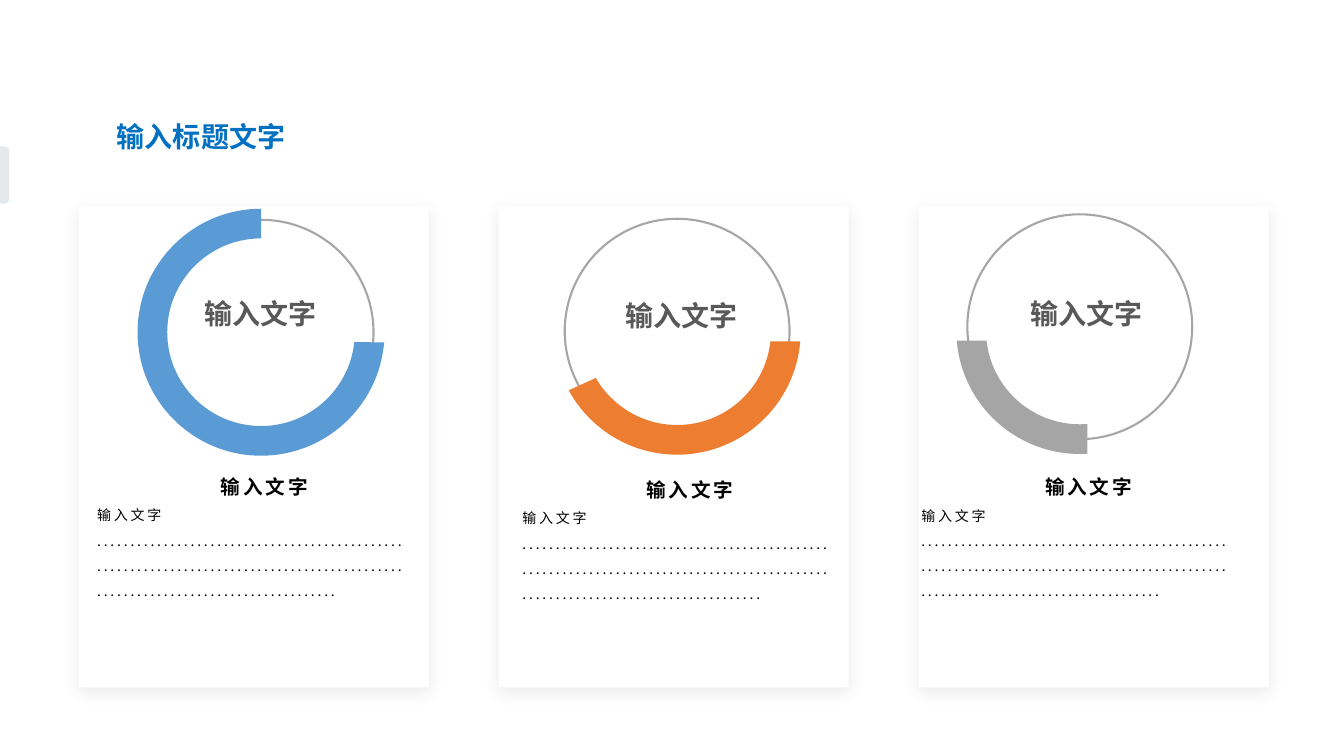
"""Build a slide with three ring cards under a title."""
from dataclasses import dataclass
from math import ceil, cos, floor, radians, sin, tan

from lxml.etree import SubElement
from pptx import Presentation
from pptx.dml.color import RGBColor
from pptx.enum.shapes import MSO_SHAPE
from pptx.enum.text import MSO_ANCHOR, MSO_AUTO_SIZE, PP_ALIGN
from pptx.oxml.ns import qn
from pptx.util import Pt


@dataclass(frozen=True)
class Theme:
    """Hold the colours, font and type sizes."""
    font: str = "Noto Sans CJK SC"
    title: str = "0070C0"
    label: str = "595959"
    ink: str = "000000"
    paper: str = "FFFFFF"
    tab: str = "E5E9EB"
    ring: str = "A6A6A6"
    blue: str = "5B9BD5"
    orange: str = "ED7D31"
    grey: str = "A5A5A5"
    large: int = 20
    head: int = 14
    small: int = 10


THEME = Theme()
RING, OUTER, INNER = 80.3, 88.2, 67
CARDS = [
    {"hub": (130.3, 90.3), "drop": 0, "fill": THEME.blue,
     "outer": (4.7, 270), "inner": (6.1, 270),
     "label": (82.8, 61.4, 96), "copy": (8.2, 180.9)},
    {"hub": (127.5, 89.6), "drop": 0, "fill": THEME.orange,
     "outer": (4.7, 151.4), "inner": (6.2, 150.1),
     "label": (83.2, 63, 100), "copy": (12, 183)},
    {"hub": (115.1, 86.4), "drop": 2.7, "fill": THEME.grey,
     "outer": (86.5, 175.3), "inner": (85.4, 173.8),
     "label": (72.9, 61.6, 142.6), "copy": (-3.1, 181.1)},
]


def style(item, **vals):
    """Set each format value on an item."""
    for name, val in vals.items():
        setattr(item, name, val)


def paint(shape, fill=None, line=None):
    """Give a shape its fill and line, and no shadow."""
    shape.shadow.inherit = False
    if fill:
        shape.fill.solid()
        shape.fill.fore_color.rgb = RGBColor.from_string(fill)
    else:
        shape.fill.background()
    if line:
        shape.line.color.rgb = RGBColor.from_string(line)
        shape.line.width = Pt(1.5)
    else:
        shape.line.fill.background()


def shade(shape):
    """Add a soft shadow below a shape."""
    effects = shape._element.spPr.find(qn("a:effectLst"))
    cast = SubElement(effects, qn("a:outerShdw"), blurRad=str(Pt(12)),
                      dist=str(Pt(3)), dir="5400000", algn="t", rotWithShape="0")
    tint = SubElement(cast, qn("a:srgbClr"), val=THEME.ink)
    SubElement(tint, qn("a:alpha"), val="8000")


def write(para, text, size, color, bold=False, space=0):
    """Write one run of text in a paragraph."""
    run = para.add_run()
    run.text = text
    style(run.font, size=Pt(size), bold=bold, name=THEME.font)
    run.font.color.rgb = RGBColor.from_string(color)
    props = run._r.get_or_add_rPr()
    SubElement(props, qn("a:ea"), typeface=THEME.font)
    if space:
        props.set("spc", str(space * 100))


def place(slide, kind, *box):
    """Add a preset shape in a box given in points."""
    return slide.shapes.add_shape(kind, *map(Pt, box))


def frame(slide, *box):
    """Add a text box that wraps and return its frame."""
    text = slide.shapes.add_textbox(*map(Pt, box)).text_frame
    text.word_wrap = True
    return text


def title(slide, x, y, w, h):
    """Set the slide title in its box."""
    shape = slide.shapes.title
    style(shape, left=Pt(x), top=Pt(y), width=Pt(w), height=Pt(h))
    style(shape.text_frame, word_wrap=True, auto_size=MSO_AUTO_SIZE.NONE,
          vertical_anchor=MSO_ANCHOR.TOP)
    para = shape.text_frame.paragraphs[0]
    para.alignment = PP_ALIGN.LEFT
    write(para, "输入标题文字", THEME.large, THEME.title, True)


def tab(slide, x, y, w, h):
    """Draw the edge tab, turned to fill its box."""
    shape = place(slide, MSO_SHAPE.ROUND_2_SAME_RECTANGLE,
                  x + (w - h) / 2, y + (h - w) / 2, h, w)
    shape.rotation = 90
    shape.adjustments[0] = 0.5
    paint(shape, THEME.tab)


def curve(x, y, radius, start, end):
    """List the Bezier points of an arc, cut at each quarter."""
    cuts = range(floor(start / 90) + 1, ceil(end / 90))
    turns = [radians(a) for a in (start, *(90 * n for n in cuts), end)]
    spots = [(cos(turns[0]), sin(turns[0]))]
    for a, b in zip(turns, turns[1:]):
        pull = 4 / 3 * tan((b - a) / 4)
        spots += [(cos(a) - pull * sin(a), sin(a) + pull * cos(a)),
                  (cos(b) + pull * sin(b), sin(b) - pull * cos(b)),
                  (cos(b), sin(b))]
    return [(100 * (x + radius * u), 100 * (y + radius * v)) for u, v in spots]


def bend(lines):
    """Turn each three line segments into one curve."""
    for first, *rest in zip(lines[::3], lines[1::3], lines[2::3]):
        first.tag = qn("a:cubicBezTo")
        for line in rest:
            first.append(line[0])
            line.getparent().remove(line)


def ring(slide, x, y, part):
    """Draw the thin ring and its thick arc about a centre."""
    circle = place(slide, MSO_SHAPE.OVAL, x - RING, y - RING, 2 * RING, 2 * RING)
    paint(circle, line=THEME.ring)
    mid = y + part["drop"]
    rim = curve(x, mid, OUTER, *part["outer"])
    hole = curve(x, mid, INNER, *part["inner"])[::-1]
    pen = slide.shapes.build_freeform(*rim[0], scale=Pt(1) / 100)
    pen.add_line_segments(rim[1:] + hole, close=True)
    arc = pen.convert_to_shape()
    paint(arc, part["fill"])
    lines = list(arc._element.spPr.iter(qn("a:lnTo")))
    bend(lines[:len(rim) - 1])
    bend(lines[len(rim):])


def copy(slide, x, y, w, h):
    """Write the heading and body text in a box."""
    text = frame(slide, x, y, w, h)
    style(text, margin_left=Pt(5), margin_right=Pt(5),
          margin_top=Pt(3), margin_bottom=Pt(3))
    rows = [("输入文字", THEME.head, True), ("输入文字", THEME.small, False),
            ("." * 128, THEME.small, False)]
    for n, (words, size, head) in enumerate(rows):
        para = text.add_paragraph() if n else text.paragraphs[0]
        style(para, line_spacing=1.5,
              alignment=PP_ALIGN.CENTER if head else PP_ALIGN.LEFT)
        if head:
            para._p.get_or_add_pPr().set("marL", str(Pt(17)))
        write(para, words, size, THEME.ink, head, 2)


def card(slide, x, y, w, h, part):
    """Draw one card with its ring, label and text."""
    panel = place(slide, MSO_SHAPE.RECTANGLE, x, y, w, h)
    paint(panel, THEME.paper)
    shade(panel)
    left, top = part["hub"]
    ring(slide, x + left, y + top, part)
    left, top, wide = part["label"]
    label = frame(slide, x + left, y + top, wide, 31.7)
    write(label.paragraphs[0], "输入文字", THEME.large, THEME.label, True)
    left, top = part["copy"]
    copy(slide, x + left, y + top, 232, 153.4)


def main():
    """Build and save the slide."""
    deck = Presentation()
    style(deck, slide_width=Pt(960), slide_height=Pt(540))
    slide = deck.slides.add_slide(deck.slide_layouts[5])
    tab(slide, 0, 104.5, 6.5, 41)
    title(slide, 76.3, 82, 291.6, 31.7)
    for n, part in enumerate(CARDS):
        card(slide, 56.2 + 300 * n, 147, 250, 344, part)
    deck.save("out.pptx")


if __name__ == "__main__":
    main()
